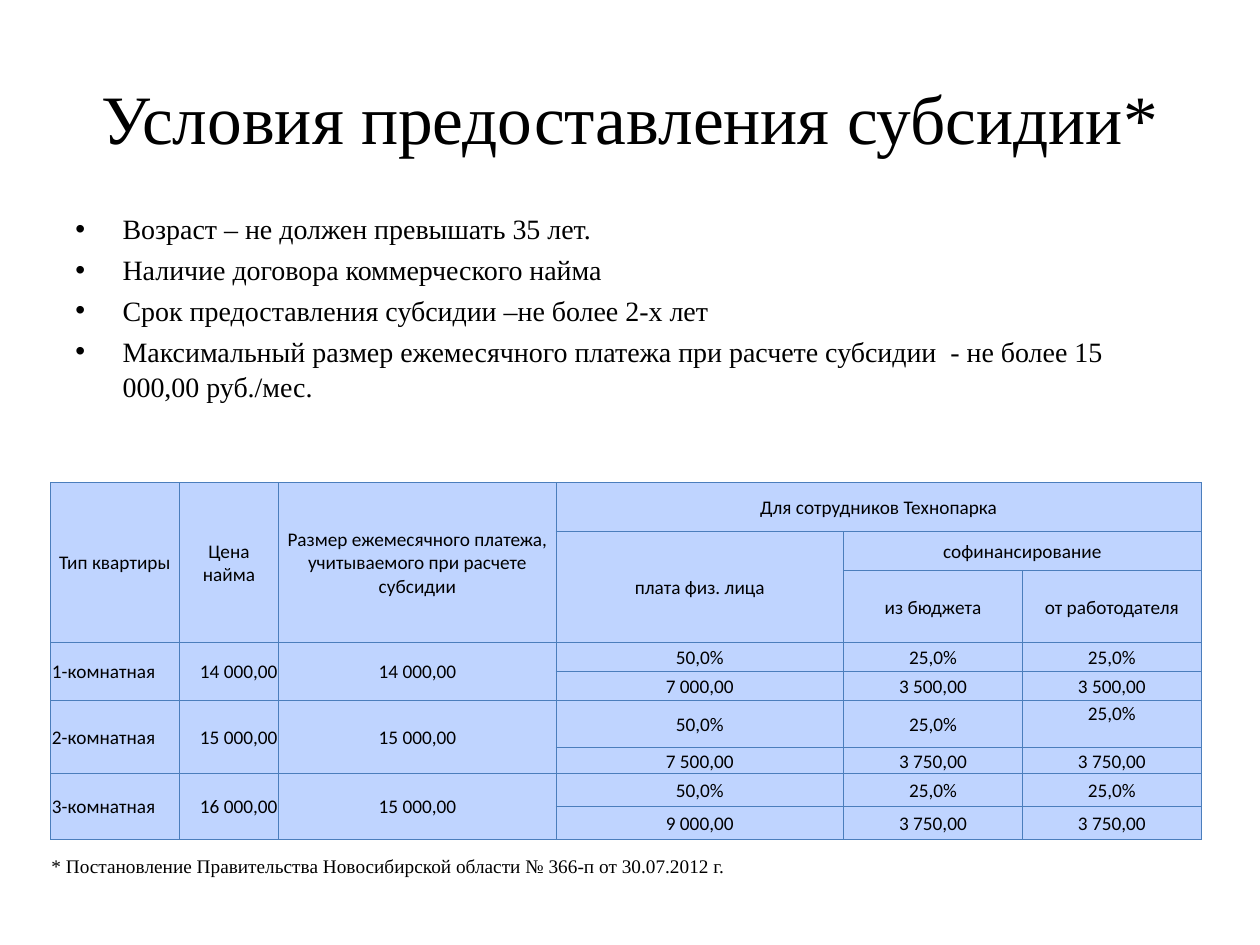
from lxml import etree
from pptx import Presentation
from pptx.dml.color import RGBColor
from pptx.enum.text import MSO_ANCHOR, PP_ALIGN
from pptx.oxml.ns import qn
from pptx.util import Pt

LEFT, CENTER, RIGHT = PP_ALIGN.LEFT, PP_ALIGN.CENTER, PP_ALIGN.RIGHT
TOP, MIDDLE = MSO_ANCHOR.TOP, MSO_ANCHOR.MIDDLE
SERIF, SANS = "Times New Roman", "Calibri"
BLACK, CELL_BLUE, BORDER_BLUE = "000000", "BFD4FF", "4B7EBC"


def color(value):
    return RGBColor.from_string(value)


def style(paragraph, font_name, size, alignment):
    paragraph.alignment = alignment
    paragraph.font.name = font_name
    paragraph.font.size = Pt(size)
    paragraph.font.color.rgb = color(BLACK)


presentation = Presentation()
presentation.slide_width = Pt(720)
presentation.slide_height = Pt(540)
slide = presentation.slides.add_slide(presentation.slide_layouts[5])

title = slide.shapes.title
title.left, title.top, title.width, title.height = Pt(36), Pt(21.6), Pt(648), Pt(90)
title.text_frame.text = "Условия предоставления субсидии*"
title.text_frame.vertical_anchor = MIDDLE
style(title.text_frame.paragraphs[0], SERIF, 39.6, CENTER)

conditions = [
    "Возраст – не должен превышать 35 лет.",
    "Наличие договора коммерческого найма",
    "Срок предоставления субсидии –не более 2-х лет",
    "Максимальный размер ежемесячного платежа при расчете субсидии  - не более 15 000,00 руб./мес.",
]
body = slide.shapes.add_textbox(Pt(36), Pt(116.64), Pt(648), Pt(172))
body.text_frame.word_wrap = True
body.text_frame.text = "\n".join(conditions)
for paragraph in body.text_frame.paragraphs:
    style(paragraph, SERIF, 16, LEFT)
    paragraph.space_before = Pt(3.2)
    paragraph.line_spacing = 1.05
    properties = paragraph._p.get_or_add_pPr()
    properties.set("marL", str(Pt(27)))
    properties.set("indent", str(Pt(-27)))
    bullet_font = etree.Element(qn("a:buFont"), typeface="Arial")
    bullet = etree.Element(qn("a:buChar"), char="•")
    default_run = properties.find(qn("a:defRPr"))
    default_run.addprevious(bullet_font)
    default_run.addprevious(bullet)

column_widths = [73.4, 57, 158.4, 164.3, 102.2, 102.2]
row_heights = [28.1, 22.3, 41.1, 16.6, 16.6, 26.8, 15, 18.7, 18.6]
rows = [
    ["Тип квартиры", "Цена найма",
     "Размер ежемесячного платежа, учитываемого при расчете субсидии",
     "Для сотрудников Технопарка", "", ""],
    ["", "", "", "плата физ. лица", "софинансирование", ""],
    ["", "", "", "", "из бюджета", "от работодателя"],
]
apartments = [
    ("1-комнатная", "14 000,00", "14 000,00", "7 000,00", "3 500,00"),
    ("2-комнатная", "15 000,00", "15 000,00", "7 500,00", "3 750,00"),
    ("3-комнатная", "16 000,00", "15 000,00", "9 000,00", "3 750,00"),
]
for apartment, price, payment, own_share, subsidy in apartments:
    rows.append([apartment, price, payment, "50,0%", "25,0%", "25,0%"])
    rows.append(["", "", "", own_share, subsidy, subsidy])

table = slide.shapes.add_table(
    len(rows), len(column_widths), Pt(29), Pt(275.8),
    Pt(sum(column_widths)), Pt(sum(row_heights))).table
for column, width in zip(table.columns, column_widths):
    column.width = Pt(width)
for row, height in zip(table.rows, row_heights):
    row.height = Pt(height)

for row_index, texts in enumerate(rows):
    for column_index, text in enumerate(texts):
        cell = table.cell(row_index, column_index)
        cell.text = text
        cell.vertical_anchor = MIDDLE
        cell.margin_left = cell.margin_right = cell.margin_top = Pt(0.72)
        cell.margin_bottom = 0
        alignment = CENTER
        if row_index > 2 and column_index < 2:
            alignment = (LEFT, RIGHT)[column_index]
        style(cell.text_frame.paragraphs[0], SANS, 11, alignment)
        cell_properties = cell._tc.get_or_add_tcPr()
        for side in ("a:lnL", "a:lnR", "a:lnT", "a:lnB"):
            border = etree.SubElement(cell_properties, qn(side), w=str(Pt(0.75)))
            border_fill = etree.SubElement(border, qn("a:solidFill"))
            etree.SubElement(border_fill, qn("a:srgbClr"), val=BORDER_BLUE)
        cell.fill.solid()
        cell.fill.fore_color.rgb = color(CELL_BLUE)
table.cell(5, 5).vertical_anchor = TOP

for column_index in range(3):
    for first_row, last_row in ((0, 2), (3, 4), (5, 6), (7, 8)):
        table.cell(first_row, column_index).merge(table.cell(last_row, column_index))
table.cell(0, 3).merge(table.cell(0, 5))
table.cell(1, 3).merge(table.cell(2, 3))
table.cell(1, 4).merge(table.cell(1, 5))

footnote = slide.shapes.add_textbox(Pt(22.32), Pt(484.56), Pt(674.64), Pt(20.88))
footnote.text_frame.word_wrap = True
footnote.text_frame.text = (
    "* Постановление Правительства Новосибирской области № 366-п от 30.07.2012 г.")
style(footnote.text_frame.paragraphs[0], SERIF, 11, LEFT)

presentation.save("out.pptx")
